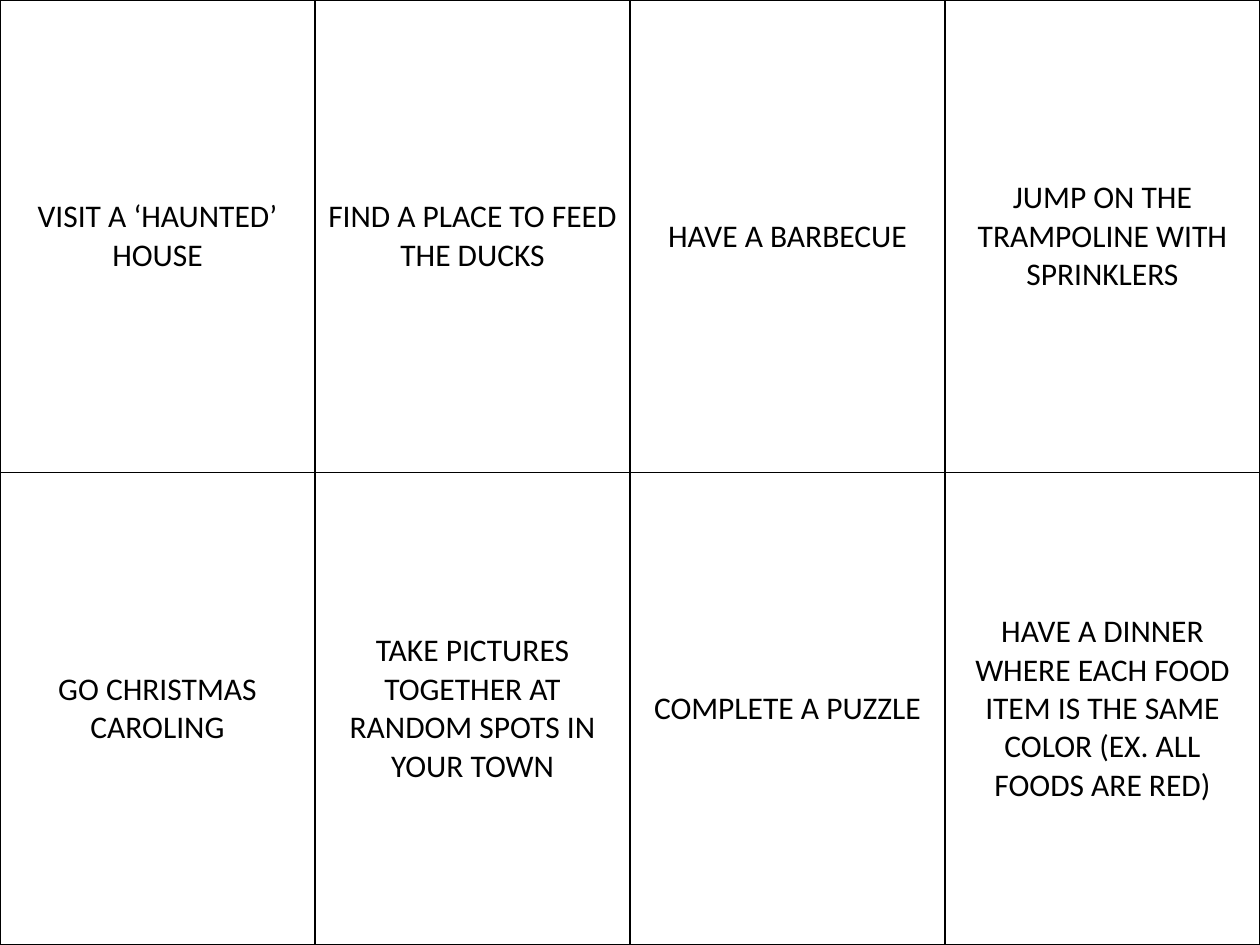
from lxml.etree import SubElement
from pptx import Presentation
from pptx.dml.color import RGBColor
from pptx.enum.text import MSO_ANCHOR, PP_ALIGN
from pptx.oxml.ns import qn
from pptx.util import Pt

ACTIVITIES = [
    [
        "VISIT A ‘HAUNTED’ HOUSE",
        "FIND A PLACE TO FEED THE DUCKS",
        "HAVE A BARBECUE",
        "JUMP ON THE TRAMPOLINE WITH SPRINKLERS",
    ],
    [
        "GO CHRISTMAS CAROLING",
        "TAKE PICTURES TOGETHER AT RANDOM SPOTS IN YOUR TOWN",
        "COMPLETE A PUZZLE",
        "HAVE A DINNER WHERE EACH FOOD ITEM IS THE SAME COLOR (EX. ALL FOODS ARE RED)",
    ],
]
WIDTH, HEIGHT = 960, 720
EMU_PER_PX = 9525
BLACK, WHITE = "000000", "FFFFFF"
FONT, FONT_SIZE, BORDER_WIDTH = "Calibri", 18, 1


def px(length):
    """Turn pixels into EMU."""
    return length * EMU_PER_PX


def color(value):
    """Turn a hex string into a colour."""
    return RGBColor.from_string(value)


def add_borders(cell):
    """Draw a solid line on all four sides of a cell."""
    properties = cell._tc.get_or_add_tcPr()
    for side in ("lnL", "lnR", "lnT", "lnB"):
        line = SubElement(properties, qn(f"a:{side}"), w=str(Pt(BORDER_WIDTH)))
        fill = SubElement(line, qn("a:solidFill"))
        SubElement(fill, qn("a:srgbClr"), val=BLACK)


def fill_card(cell, text):
    """Style a cell and write its activity in the middle."""
    add_borders(cell)
    cell.fill.solid()
    cell.fill.fore_color.rgb = color(WHITE)
    cell.vertical_anchor = MSO_ANCHOR.MIDDLE
    paragraph = cell.text_frame.paragraphs[0]
    paragraph.alignment = PP_ALIGN.CENTER
    run = paragraph.add_run()
    run.text = text
    run.font.name = FONT
    run.font.size = Pt(FONT_SIZE)
    run.font.bold = False
    run.font.color.rgb = color(BLACK)


def main():
    """Build the slide of activity cards."""
    presentation = Presentation()
    presentation.slide_width, presentation.slide_height = px(WIDTH), px(HEIGHT)
    slide = presentation.slides.add_slide(presentation.slide_layouts[6])
    table = slide.shapes.add_table(
        len(ACTIVITIES), len(ACTIVITIES[0]), 0, 0, px(WIDTH), px(HEIGHT)
    ).table
    table.first_row = table.horz_banding = False
    for row, texts in enumerate(ACTIVITIES):
        for column, text in enumerate(texts):
            fill_card(table.cell(row, column), text)
    presentation.save("out.pptx")


if __name__ == "__main__":
    main()
